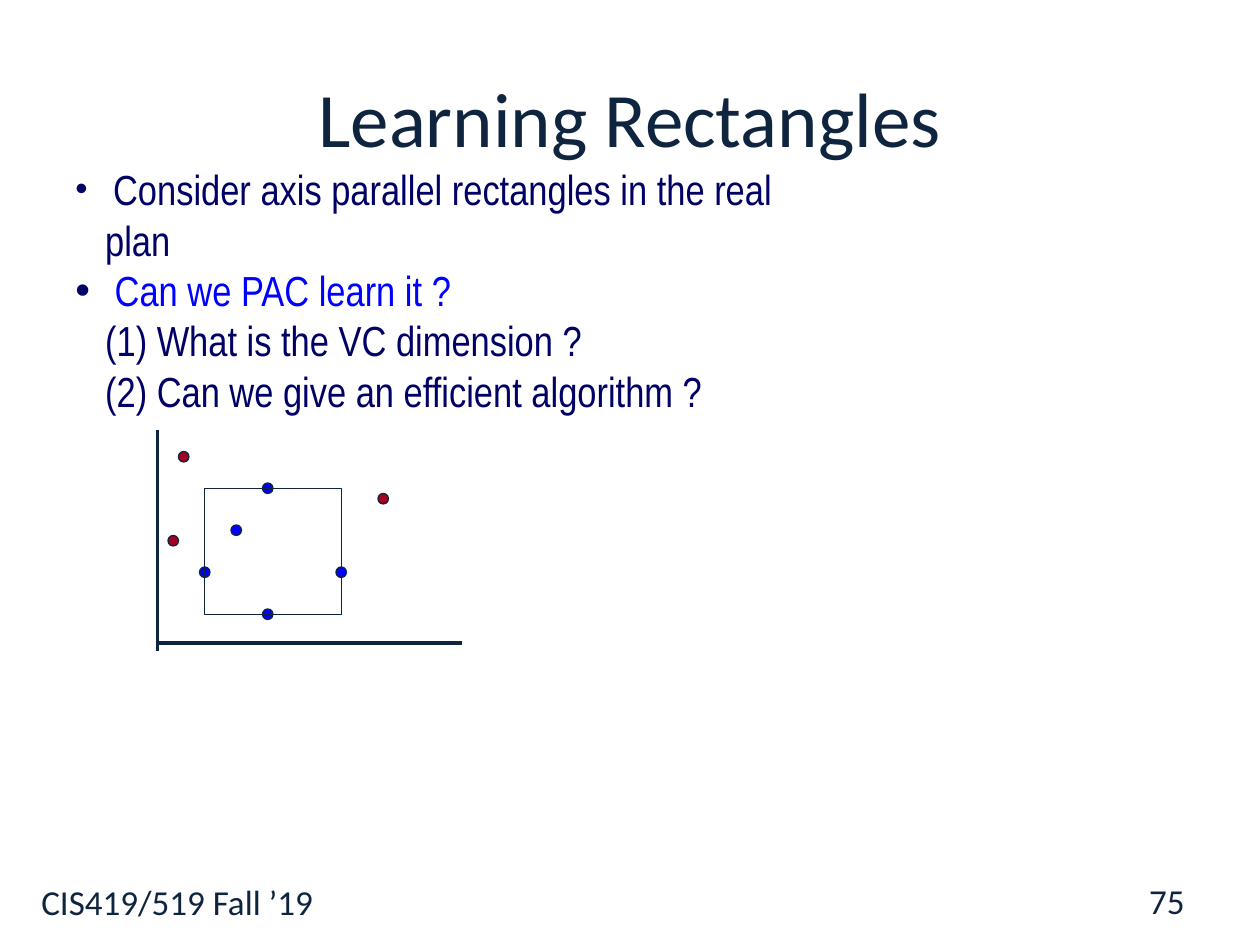
import pptx
import pptx.util
import pptx.dml.color
import pptx.enum.shapes
import pptx.enum.text
import lxml.etree

Pt = pptx.util.Pt
Color = pptx.dml.color.RGBColor.from_string
Shape = pptx.enum.shapes.MSO_SHAPE
Align = pptx.enum.text.PP_ALIGN
Anchor = pptx.enum.text.MSO_ANCHOR
qname = pptx.oxml.ns.qn

theme = {
    "ink": Color("0F243E"), "navy": Color("000066"),
    "blue": Color("0000FF"), "red": Color("A50021"),
    "heading": "Calibri", "body": "Arial Narrow",
    "title": Pt(44), "text": Pt(24), "small": Pt(20),
    "axis": Pt(2.25), "outline": Pt(0.75),
}

deck = pptx.Presentation()
deck.slide_width, deck.slide_height = Pt(720), Pt(540)
page = deck.slides.add_slide(deck.slide_layouts[6])


def add_box(left, top, width, height, anchor):
    box = page.shapes.add_textbox(Pt(left), Pt(top), Pt(width), Pt(height))
    for name, value in {"word_wrap": True, "vertical_anchor": anchor}.items():
        setattr(box.text_frame, name, value)
    return box.text_frame


def add_span(para, text, font, size, color):
    span = para.add_run()
    span.text = text
    for name, value in {"name": font, "size": size}.items():
        setattr(span.font, name, value)
    span.font.color.rgb = color


labels = [
    ("CIS419/519 Fall ’19", (16.5, 499.5, 400, 40), Anchor.TOP, Align.LEFT, "small"),
    ("Learning Rectangles", (36, 21.6, 648, 90), Anchor.MIDDLE, Align.CENTER, "title"),
    ("75", (516, 500.4, 168, 28.8), Anchor.MIDDLE, Align.RIGHT, "small"),
]
for text, place, anchor, align, size in labels:
    para = add_box(*place, anchor).paragraphs[0]
    para.alignment = align
    add_span(para, text, theme["heading"], theme[size], theme["ink"])

points = [
    ("Consider axis parallel rectangles in the real plan", "navy", "small"),
    ("Can we PAC learn it ?", "blue", "text"),
    ("(1) What is the VC dimension ?", "navy", None),
    ("(2) Can we give an efficient algorithm ?", "navy", None),
]
frame = add_box(36, 90, 445, 122.4, Anchor.TOP)
for index, (text, color, bullet_size) in enumerate(points):
    para = frame.add_paragraph() if index else frame.paragraphs[0]
    layout = para._p.get_or_add_pPr()
    layout.set("marL", str(Pt(17)))
    if bullet_size:
        layout.set("indent", str(Pt(-17)))
        lxml.etree.SubElement(layout, qname("a:buFont")).set("typeface", "Arial")
        lxml.etree.SubElement(layout, qname("a:buChar")).set("char", "•")
        add_span(para, " ", theme["body"], theme[bullet_size], theme["navy"])
    add_span(para, text, theme["body"], theme["text"], theme[color])

for ends in [(90, 367.2, 264, 367.2), (90, 372, 90, 246)]:
    axis = page.shapes.add_connector(
        pptx.enum.shapes.MSO_CONNECTOR.STRAIGHT, *map(Pt, ends))
    axis.line.color.rgb = theme["ink"]
    axis.line.width = theme["axis"]
    lxml.etree.SubElement(axis._element.spPr, qname("a:effectLst"))

dots = {
    "blue": [(150, 276), (114, 324), (192, 324), (150, 348), (132, 300)],
    "red": [(96, 306), (102, 258), (216, 282)],
}
figures = [(Shape.OVAL, (left, top, 6, 6), color)
           for color, places in dots.items() for left, top in places]
figures.append((Shape.RECTANGLE, (117, 279, 78, 72), None))
for kind, place, color in figures:
    figure = page.shapes.add_shape(kind, *map(Pt, place))
    figure.shadow.inherit = False
    figure.line.color.rgb = theme["ink"]
    figure.line.width = theme["outline"]
    if color:
        figure.fill.solid()
        figure.fill.fore_color.rgb = theme[color]
    else:
        figure.fill.background()

deck.save("out.pptx")
